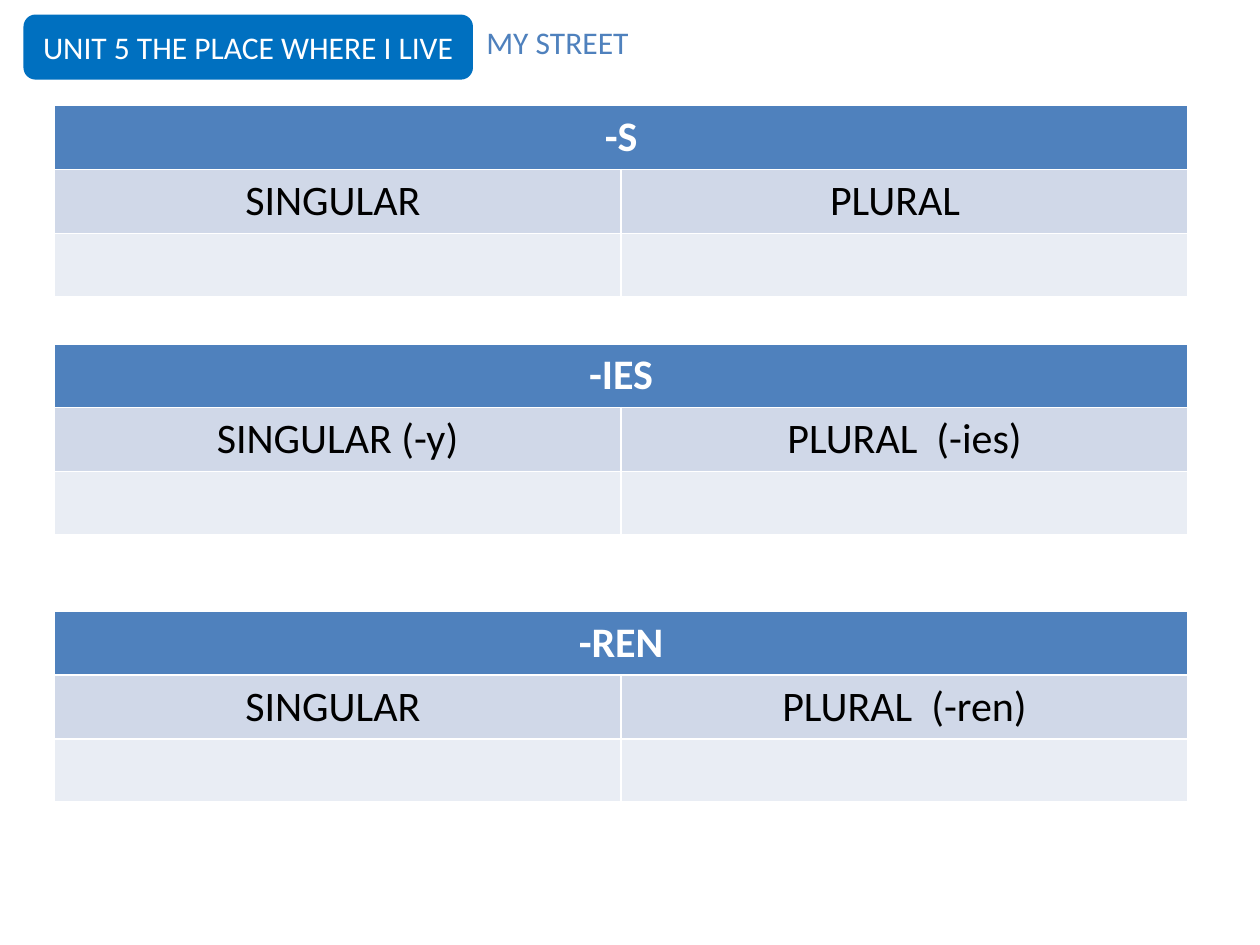
from pptx import Presentation
from pptx.dml.color import RGBColor
from pptx.enum import shapes, text
from pptx.util import Cm, Pt

WHITE = RGBColor(0xFF, 0xFF, 0xFF)
BLACK = RGBColor(0x00, 0x00, 0x00)
UNIT_BLUE = RGBColor(0x00, 0x70, 0xC0)
HEADING_BLUE = RGBColor(0x4F, 0x81, 0xBD)
LABEL_BLUE = RGBColor(0xD0, 0xD8, 0xE8)
ANSWER_BLUE = RGBColor(0xE9, 0xED, 0xF4)
FONT = "Calibri"

# Ending, singular label, plural label, top of the table in cm
PLURAL_RULES = [
    ("-S", "SINGULAR ", "PLURAL  ", 2.13),
    ("-IES", "SINGULAR (-y)", "PLURAL  (-ies)", 6.93),
    ("-REN", "SINGULAR ", "PLURAL  (-ren)", 12.32),
]


def write(frame, words, size, color, bold=False, align=text.PP_ALIGN.CENTER):
    frame.text = words
    paragraph = frame.paragraphs[0]
    paragraph.alignment = align
    for run in paragraph.runs:
        run.font.name = FONT
        run.font.size = Pt(size)
        run.font.bold = bold
        run.font.color.rgb = color


def add_header(slide, left, top, width, height):
    """Place the unit badge and, to its right, the lesson title."""
    badge_width = Cm(8.99)
    gap = Cm(0.05)

    lesson = slide.shapes.title
    lesson.left, lesson.top = left + badge_width + gap, top
    lesson.width, lesson.height = width - badge_width - gap, height
    frame = lesson.text_frame
    frame.auto_size = text.MSO_AUTO_SIZE.NONE
    frame.vertical_anchor = text.MSO_ANCHOR.TOP
    write(frame, "MY STREET", 18, HEADING_BLUE, align=text.PP_ALIGN.LEFT)

    unit = slide.shapes.add_shape(
        shapes.MSO_SHAPE.ROUNDED_RECTANGLE, left, top, badge_width, height)
    unit.shadow.inherit = False
    unit.fill.solid()
    unit.fill.fore_color.rgb = UNIT_BLUE
    unit.line.color.rgb = UNIT_BLUE
    unit.line.width = Pt(2)
    unit.text_frame.vertical_anchor = text.MSO_ANCHOR.MIDDLE
    write(unit.text_frame, "UNIT 5 THE PLACE WHERE I LIVE", 18, WHITE)


def add_plural_table(slide, left, top, width, height, ending, singular, plural):
    """Place a heading row, a row of labels and a row left for answers."""
    table = slide.shapes.add_table(3, 2, left, top, width, height).table
    for row, color in zip(table.rows, (HEADING_BLUE, LABEL_BLUE, ANSWER_BLUE)):
        for cell in row.cells:
            cell.fill.solid()
            cell.fill.fore_color.rgb = color

    heading = table.cell(0, 0)
    heading.merge(table.cell(0, 1))
    write(heading.text_frame, ending, 24, WHITE, bold=True)
    for column, label in enumerate((singular, plural)):
        write(table.cell(1, column).text_frame, label, 24, BLACK)


def main():
    prs = Presentation()
    prs.slide_width, prs.slide_height = Cm(25.4), Cm(19.05)
    slide = prs.slides.add_slide(prs.slide_layouts.get_by_name("Title Only"))

    add_header(slide, Cm(0.51), Cm(0.33), Cm(13.74), Cm(1.24))
    for ending, singular, plural, top in PLURAL_RULES:
        add_plural_table(slide, Cm(1.09), Cm(top), Cm(22.86), Cm(3.81),
                         ending, singular, plural)

    prs.save("out.pptx")


if __name__ == "__main__":
    main()
